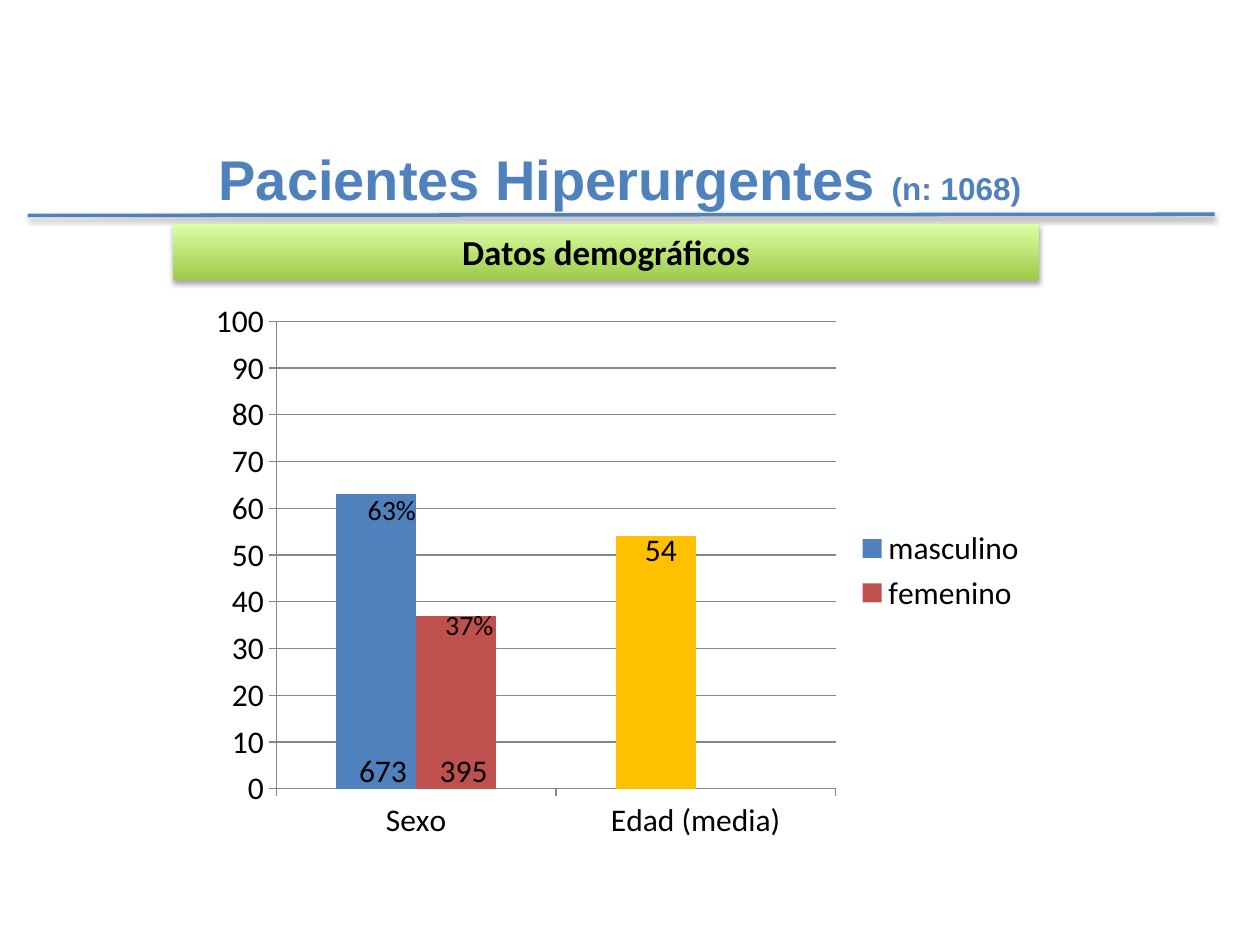
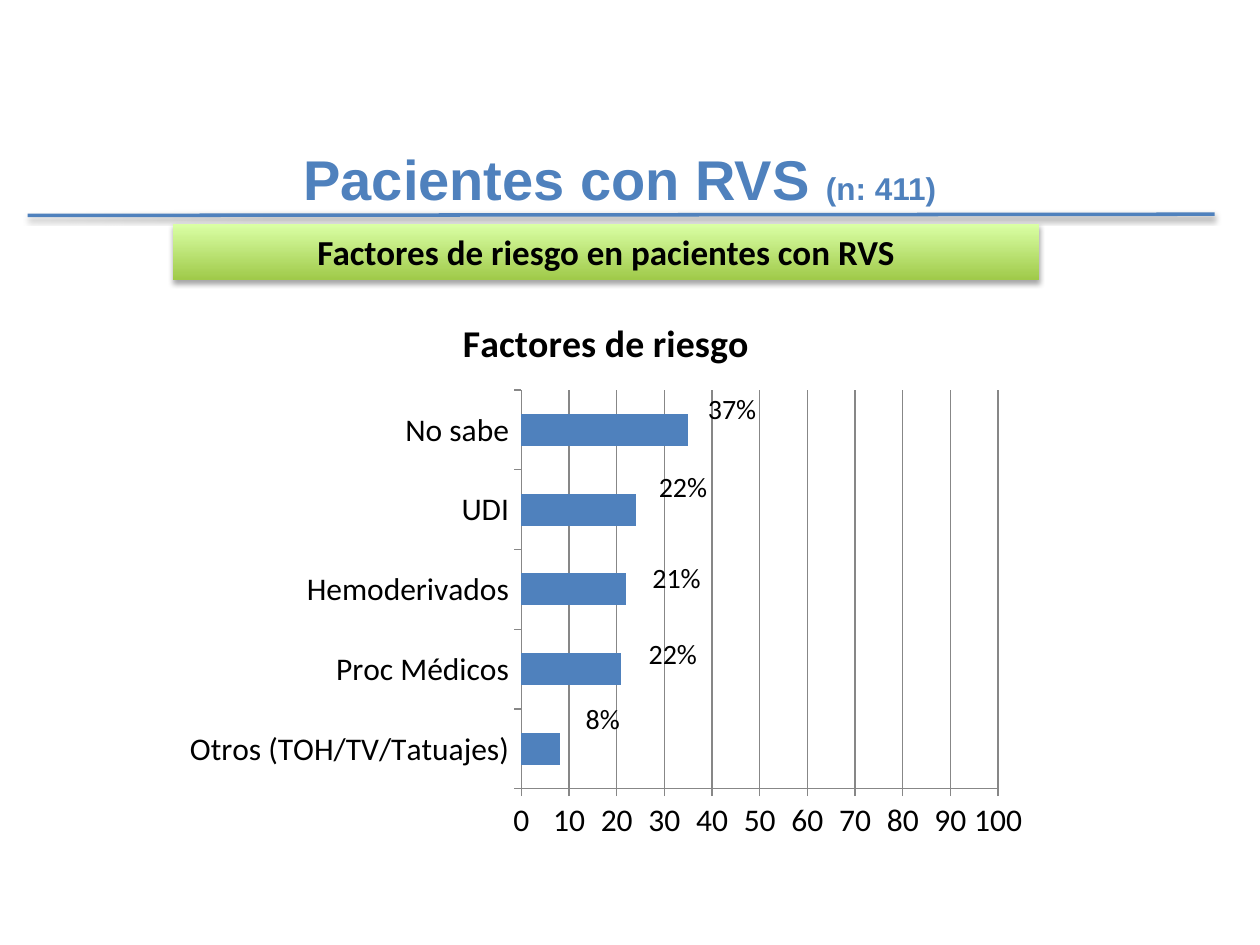
from lxml.etree import SubElement
from pptx import Presentation
from pptx.chart.data import CategoryChartData
from pptx.dml.color import RGBColor
from pptx.enum.chart import XL_CHART_TYPE, XL_LEGEND_POSITION, XL_TICK_MARK
from pptx.enum.shapes import MSO_CONNECTOR, MSO_SHAPE
from pptx.enum.text import MSO_ANCHOR, MSO_AUTO_SIZE, PP_ALIGN
from pptx.oxml.ns import qn
from pptx.util import Inches, Pt

BLUE = RGBColor(0x4F, 0x81, 0xBD)
RED = RGBColor(0xC0, 0x50, 0x4D)
AMBER = RGBColor(0xFF, 0xC0, 0x00)
GREEN = RGBColor(0xA0, 0xCA, 0x4A)
LIGHT_GREEN = RGBColor(0xDA, 0xFF, 0xA5)
GREY = RGBColor(0x87, 0x87, 0x87)
BLACK = RGBColor(0x00, 0x00, 0x00)


def set_font(font, size, name="Calibri", color=BLACK, bold=False):
    font.size, font.name, font.bold = Pt(size), name, bold
    font.color.rgb = color


def add_span(para, text, **style):
    span = para.add_run()
    span.text = text
    set_font(span.font, **style)


def add_shadow(shape, opacity, distance):
    """Cast a soft black shadow straight down."""
    effects = SubElement(shape._element.spPr, qn("a:effectLst"))
    shadow = SubElement(effects, qn("a:outerShdw"), blurRad=str(Pt(3.1)),
                        dist=str(Pt(distance)), dir="5400000", rotWithShape="0")
    color = SubElement(shadow, qn("a:srgbClr"), val=str(BLACK))
    SubElement(color, qn("a:alpha"), val=str(opacity * 1000))


class SlideBuilder:
    def __init__(self):
        self.deck = Presentation()
        self.deck.slide_width, self.deck.slide_height = Inches(10), Inches(7.5)
        self.page = None

    def start_page(self, title, count, banner):
        self.page = self.deck.slides.add_slide(self.deck.slide_layouts[6])
        self.add_rule()
        self.add_banner(banner)
        self.add_title(title, count)

    def add_box(self, left, top, width, height, align):
        box = self.page.shapes.add_textbox(
            Inches(left), Inches(top), Inches(width), Inches(height))
        box.text_frame.word_wrap = True
        box.text_frame.paragraphs[0].alignment = align
        return box.text_frame

    def add_title(self, title, count):
        frame = self.add_box(0.42, 1.06, 9, 0.71, PP_ALIGN.CENTER)
        frame.vertical_anchor = MSO_ANCHOR.MIDDLE
        for text, size in ((f"{title} ", 32), (f"(n: {count})", 18)):
            add_span(frame.paragraphs[0], text, size=size, name="Arial",
                     color=BLUE, bold=True)

    def add_rule(self):
        rule = self.page.shapes.add_connector(
            MSO_CONNECTOR.STRAIGHT, Inches(0.22), Inches(1.71), Inches(9.64), Inches(1.7))
        rule.line.color.rgb = BLUE
        rule.line.width = Pt(2)
        add_shadow(rule, opacity=38, distance=1.6)

    def add_banner(self, text):
        banner = self.page.shapes.add_shape(
            MSO_SHAPE.RECTANGLE, Inches(1.37), Inches(1.78), Inches(6.88), Inches(0.44))
        banner.fill.gradient()
        banner.fill.gradient_angle = 90
        for stop, position, color in zip(
                banner.fill.gradient_stops, (0, 1), (GREEN, LIGHT_GREEN)):
            stop.position = position
            stop.color.rgb = color
        banner.line.fill.background()
        add_shadow(banner, opacity=35, distance=1.8)
        para = banner.text_frame.paragraphs[0]
        para.alignment = PP_ALIGN.CENTER
        add_span(para, text, size=20, bold=True)

    def add_label(self, text, left, top, width, size=16, align=PP_ALIGN.LEFT):
        height = 0.37 if size == 16 else 0.4
        frame = self.add_box(left, top, width, height, align)
        frame.auto_size = MSO_AUTO_SIZE.SHAPE_TO_FIT_TEXT
        add_span(frame.paragraphs[0], text, size=size)

    def add_bars(self, kind, left, width, categories, series, title=None, legend=False):
        """Add a 0-100 bar chart; series holds (name, values, colour) tuples."""
        data = CategoryChartData()
        data.categories = categories
        for name, values, _ in series:
            data.add_series(name, values)
        chart = self.page.shapes.add_chart(
            kind, Inches(left), Inches(2.31), Inches(width), Inches(4.44), data).chart
        set_font(chart.font, 18)

        chart.has_title = title is not None
        if title:
            para = chart.chart_title.text_frame.paragraphs[0]
            add_span(para, title, size=21.6, bold=True)
        chart.has_legend = legend
        if legend:
            chart.legend.position = XL_LEGEND_POSITION.RIGHT
            chart.legend.include_in_layout = False

        scale = chart.value_axis
        scale.minimum_scale, scale.maximum_scale, scale.major_unit = 0, 100, 10
        scale.major_gridlines.format.line.color.rgb = GREY
        for axis in (chart.category_axis, scale):
            axis.major_tick_mark = XL_TICK_MARK.OUTSIDE
            axis.minor_tick_mark = XL_TICK_MARK.NONE
            axis.format.line.color.rgb = GREY

        plot = chart.plots[0]
        plot.gap_width = 150
        plot.vary_by_categories = False
        for bars, (_, _, color) in zip(plot.series, series):
            bars.invert_if_negative = False
            bars.format.fill.solid()
            bars.format.fill.fore_color.rgb = color
        return plot


def add_demographics(slides):
    slides.start_page("Pacientes Hiperurgentes", 1068, "Datos demográficos")
    plot = slides.add_bars(
        XL_CHART_TYPE.COLUMN_CLUSTERED, 1.58, 6.67, ["Sexo", "Edad (media)"],
        [("masculino", (63, 54), BLUE), ("femenino", (37, None), RED)], legend=True)
    age_fill = plot.series[0].points[1].format.fill
    age_fill.solid()
    age_fill.fore_color.rgb = AMBER

    slides.add_label("63%", 2.82, 3.86, 0.59)
    slides.add_label("37%", 3.43, 4.77, 0.59, align=PP_ALIGN.CENTER)
    for text, left, top, width in (("54", 4.96, 4.16, 0.57),
                                   ("673", 2.59, 5.91, 0.9),
                                   ("395", 3.23, 5.91, 0.9)):
        slides.add_label(text, left, top, width, size=18, align=PP_ALIGN.CENTER)


def add_risk_factors(slides):
    slides.start_page("Pacientes con RVS", 411, "Factores de riesgo en pacientes con RVS")
    name = "Factores de riesgo"
    plot = slides.add_bars(
        XL_CHART_TYPE.BAR_STACKED, 1.37, 6.88,
        ["Otros (TOH/TV/Tatuajes)", "Proc Médicos", "Hemoderivados", "UDI", "No sabe"],
        [(name, (8, 21, 22, 24, 35), BLUE)], title=name)
    plot.overlap = 100

    for text, left, top, width in (("37%", 5.52, 3.06, 0.63),
                                   ("22%", 5.13, 3.68, 0.71),
                                   ("21%", 5.08, 4.4, 0.64),
                                   ("22%", 5.05, 5, 0.64),
                                   ("8%", 4.55, 5.52, 0.67)):
        slides.add_label(text, left, top, width)


def main():
    slides = SlideBuilder()
    add_demographics(slides)
    add_risk_factors(slides)
    slides.deck.save("out.pptx")


if __name__ == "__main__":
    main()
